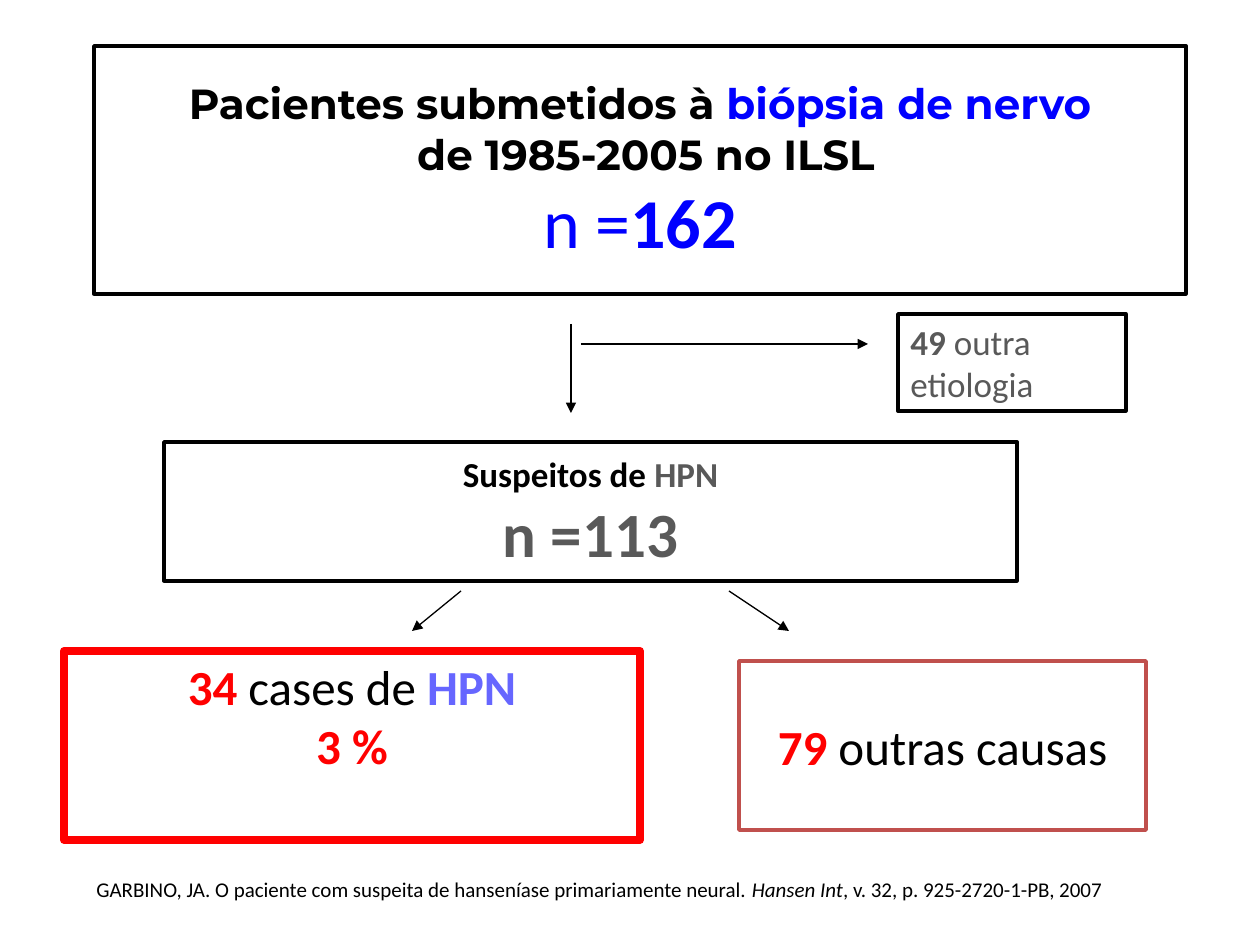
"""Builds the patient flow slide for nerve biopsies."""
from lxml.etree import SubElement
from pptx import Presentation
from pptx.dml.color import RGBColor
from pptx.enum.shapes import MSO_CONNECTOR as Conn, MSO_SHAPE as Shape
from pptx.enum.text import MSO_ANCHOR as Anchor, MSO_AUTO_SIZE as Auto, PP_ALIGN as Align
from pptx.oxml.ns import qn
from pptx.util import Emu, Pt

SCALE = 914400 / 126
BLACK = RGBColor(0, 0, 0)
WHITE = RGBColor(255, 255, 255)
BLUE = RGBColor(0, 0, 255)
RED = RGBColor(255, 0, 0)
GRAY = RGBColor(0x59, 0x59, 0x59)
LILAC = RGBColor(0x66, 0x66, 0xFF)
BRICK = RGBColor(0xC0, 0x50, 0x4D)
SANS, TITLE = "Calibri", "Montserrat"

TOTAL = [
    (TITLE, 24, [("Pacientes submetidos à ", BLACK, "b"), ("biópsia de nervo", BLUE, "b")]),
    (TITLE, 24, [(" de 1985-2005 no ILSL", BLACK, "b")]),
    (SANS, 40, [("n =", BLUE, ""), ("162", BLUE, "b")]),
]
SUSPECT = [
    (SANS, 20, [("Suspeitos de ", BLACK, "b"), ("HPN", GRAY, "b")]),
    (SANS, 36, [("n =113", GRAY, "b")]),
]
CASES = [
    (SANS, 28, [("34 ", RED, "b"), ("cases de ", BLACK, ""), ("HPN", LILAC, "b")]),
    (SANS, 28, [("3 %", RED, "b")]),
]
CAUSES = [(SANS, 28, [("79 ", RED, "b"), ("outras causas", BLACK, "")])]
OTHER = [(SANS, 20, [("49 ", GRAY, "b"), ("outra etiologia", GRAY, "")])]
SOURCE = [(SANS, 12, [
    ("GARBINO, JA. O paciente com suspeita de hanseníase primariamente neural. ", BLACK, ""),
    ("Hansen Int", BLACK, "i"),
    (", v. 32, p. 925-2720-1-PB, 2007", BLACK, ""),
])]

BOXES = [
    ((94, 46, 1092, 248), BLACK, 2, TOTAL, 6),
    ((164, 442, 853, 139), BLACK, 2, SUSPECT, 6),
    ((64, 651, 576, 189), RED, 4.5, CASES, 66),
    ((739, 661, 407, 169), BRICK, 2, CAUSES, 6),
]
SIDE = (898, 314, 228, 97)
NOTE = (84, 870, 1081, 38)
ARROWS = [
    (571, 324, 571, 413),
    (581, 344, 868, 344),
    (461, 591, 412, 631),
    (729, 591, 789, 631),
]


def px(num):
    return Emu(round(num * SCALE))


def write(frame, paras, align):
    for i, (font, size, runs) in enumerate(paras):
        para = frame.add_paragraph() if i else frame.paragraphs[0]
        para.alignment = align
        for text, color, style in runs:
            run = para.add_run()
            run.text = text
            run.font.name = font
            run.font.size = Pt(size)
            run.font.color.rgb = color
            run.font.bold = "b" in style
            run.font.italic = "i" in style


def add_box(slide, area, color, width):
    box = slide.shapes.add_shape(Shape.RECTANGLE, *map(px, area))
    box.shadow.inherit = False
    box.fill.solid()
    box.fill.fore_color.rgb = WHITE
    box.line.color.rgb = color
    box.line.width = Pt(width)
    return box.text_frame


def add_arrow(slide, ends):
    arrow = slide.shapes.add_connector(Conn.STRAIGHT, *map(px, ends))
    arrow.line.color.rgb = BLACK
    arrow.line.width = Pt(0.75)
    SubElement(arrow.line._get_or_add_ln(), qn("a:tailEnd"), type="triangle")
    SubElement(arrow._element.spPr, qn("a:effectLst"))


def main():
    deck = Presentation()
    deck.slide_width, deck.slide_height = px(1260), px(945)
    slide = deck.slides.add_slide(deck.slide_layouts[6])

    for area, color, width, paras, foot in BOXES:
        frame = add_box(slide, area, color, width)
        frame.word_wrap = False
        frame.vertical_anchor = Anchor.MIDDLE
        frame.margin_bottom = px(foot)
        write(frame, paras, Align.CENTER)

    for ends in ARROWS:
        add_arrow(slide, ends)

    side = add_box(slide, SIDE, BLACK, 2)
    note = slide.shapes.add_textbox(*map(px, NOTE)).text_frame
    for frame, paras in ((side, OTHER), (note, SOURCE)):
        frame.word_wrap = True
        frame.auto_size = Auto.SHAPE_TO_FIT_TEXT
        frame.vertical_anchor = Anchor.TOP
        write(frame, paras, Align.LEFT)

    deck.save("out.pptx")


if __name__ == "__main__":
    main()
